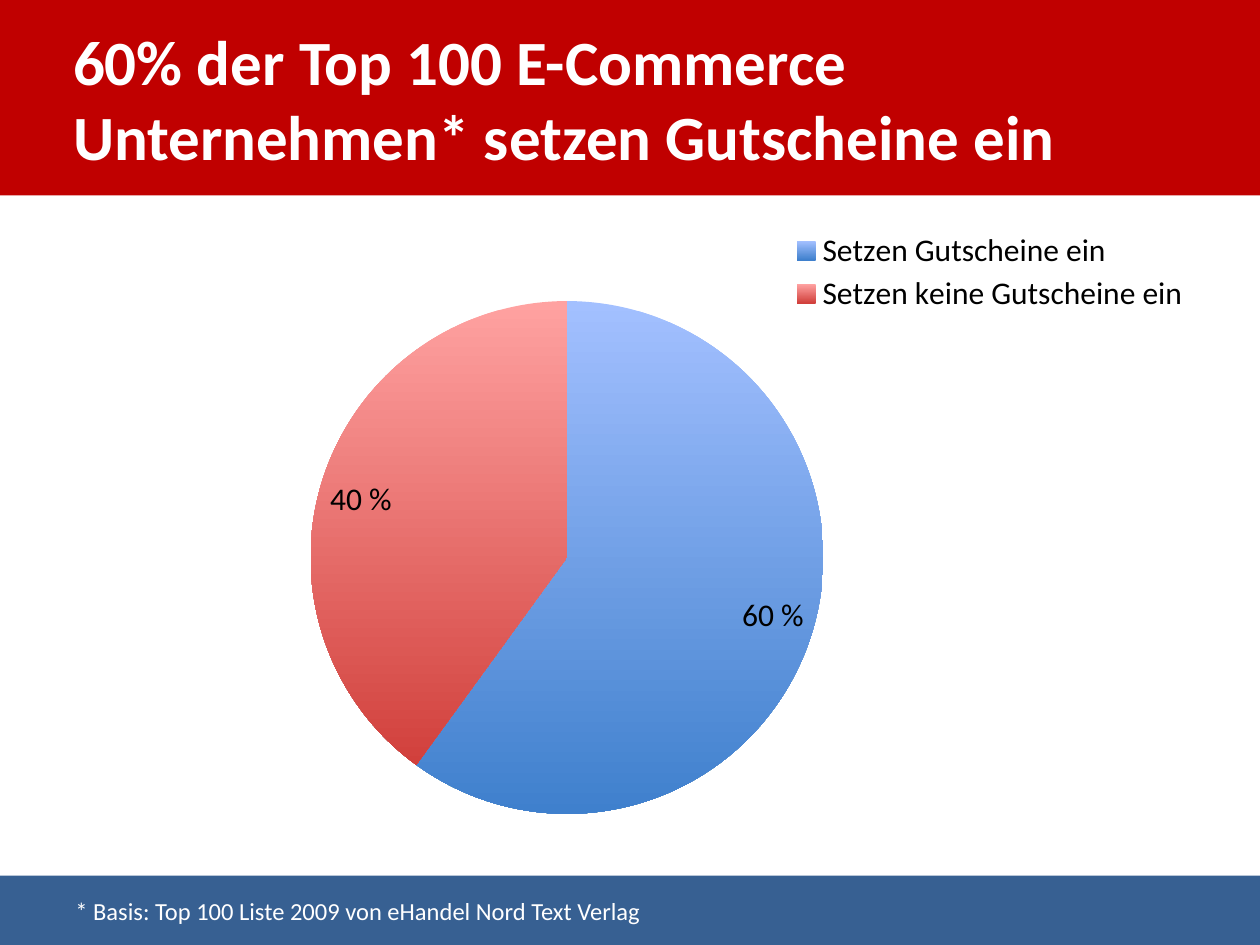
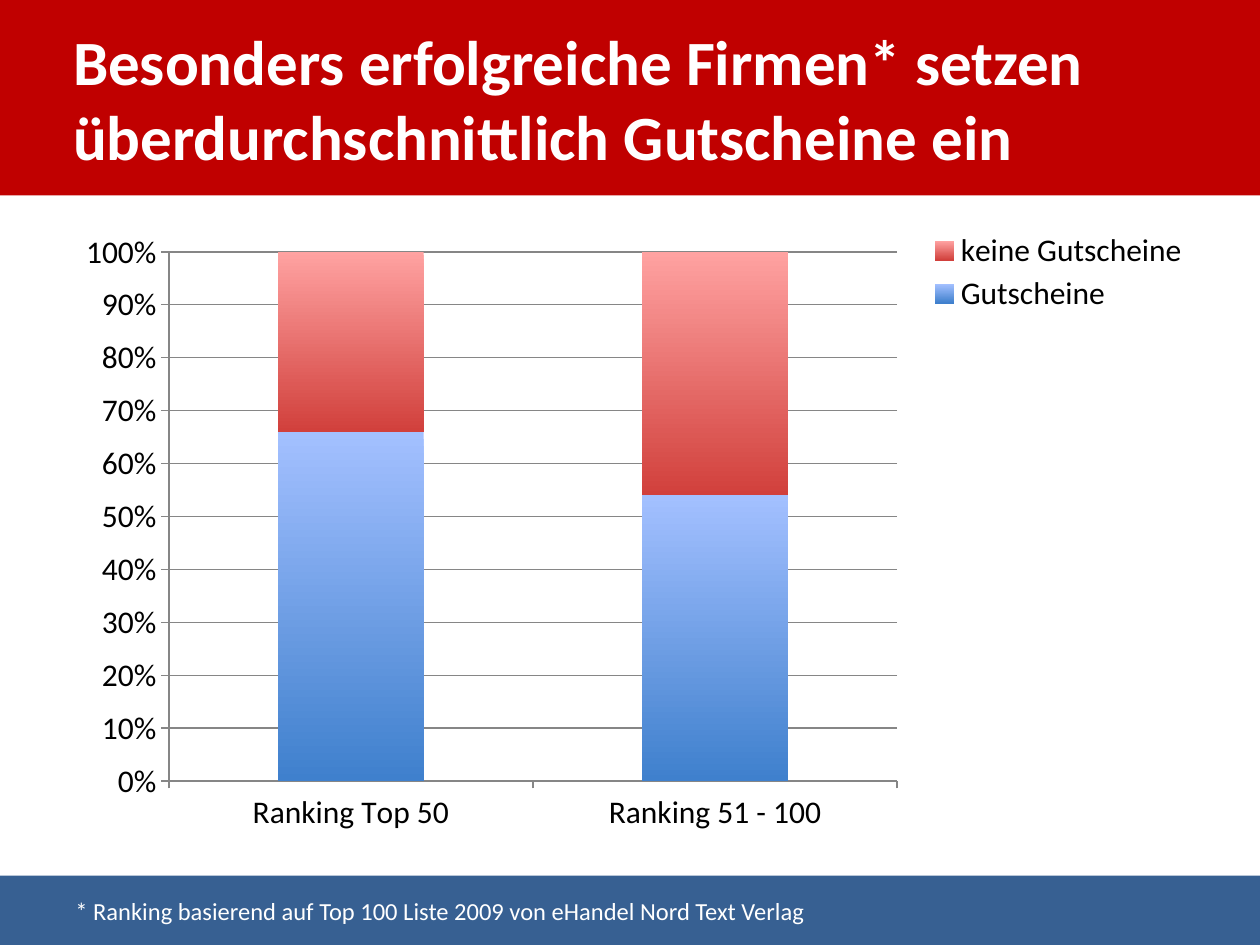
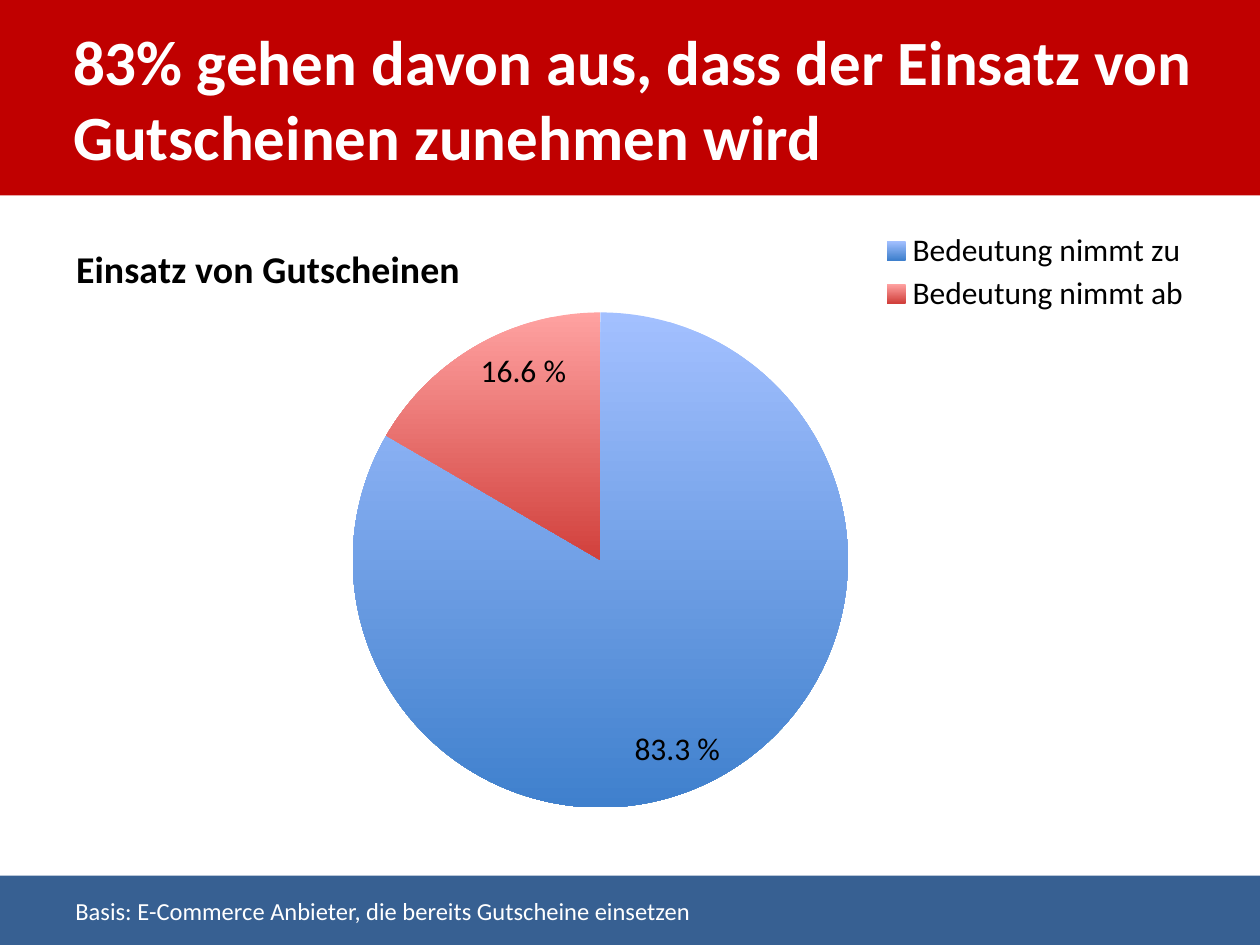
from dataclasses import dataclass
from lxml import etree
from pptx import Presentation
from pptx import util as u
from pptx.chart.data import CategoryChartData
from pptx.dml.color import RGBColor
from pptx.enum import chart as ch, shapes, text
from pptx.oxml import ns

WIDE, HIGH = 9, 4.95


@dataclass(frozen=True)
class Theme:
    font: str = "Calibri"
    red: str = "C00000"
    blue: str = "376092"
    white: str = "FFFFFF"
    black: str = "000000"
    grey: str = "868686"
    fades: tuple = (("A3C0FF", "3F80CD"), ("FFA2A1", "D1403C"))
    head: float = 36
    label: float = 18
    title: float = 21.6
    note: float = 14


def rgb(code):
    return RGBColor.from_string(code)


def place(node, index, box, inner=False):
    for old in node.findall(ns.qn("c:layout")):
        node.remove(old)
    layout = etree.Element(ns.qn("c:layout"))
    manual = etree.SubElement(layout, ns.qn("c:manualLayout"))
    items = [("layoutTarget", "inner")] if inner else []
    items += [("xMode", "edge"), ("yMode", "edge")]
    items += [(name, val / size) for name, val, size
              in zip("xywh", box, (WIDE, HIGH, WIDE, HIGH))]
    for name, val in items:
        etree.SubElement(manual, ns.qn("c:" + name)).set("val", str(val))
    node.insert(index, layout)


class Deck:
    def __init__(self, theme):
        self.theme = theme
        self.prs = Presentation()
        self.prs.slide_width = u.Inches(10)
        self.prs.slide_height = u.Inches(7.5)
        self.slide = None

    def style(self, font, size, color, bold=False):
        font.name = self.theme.font
        font.size = u.Pt(size)
        font.bold = bold
        font.color.rgb = rgb(color)

    def label(self, frame, words, size, bold=False):
        frame.word_wrap = True
        para = frame.paragraphs[0]
        para.alignment = text.PP_ALIGN.LEFT
        run = para.add_run()
        run.text = words
        self.style(run.font, size, self.theme.white, bold)

    def band(self, top, height, color):
        shape = self.slide.shapes.add_shape(
            shapes.MSO_SHAPE.RECTANGLE, 0, u.Inches(top),
            self.prs.slide_width, u.Inches(height))
        shape.shadow.inherit = False
        shape.fill.solid()
        shape.fill.fore_color.rgb = rgb(color)
        shape.line.fill.background()
        return shape

    def page(self, title, note):
        self.slide = self.prs.slides.add_slide(self.prs.slide_layouts[6])
        self.band(6.95, 0.55, self.theme.blue)
        frame = self.band(0, 1.55, self.theme.red).text_frame
        frame.margin_left = u.Inches(0.58)
        frame.margin_right = u.Inches(0.4)
        frame.vertical_anchor = text.MSO_ANCHOR.MIDDLE
        self.label(frame, title, self.theme.head, True)
        box = self.slide.shapes.add_textbox(
            u.Inches(0.5), u.Inches(7.06), u.Inches(7.84), u.Inches(0.34))
        self.label(box.text_frame, note, self.theme.note)

    def fade(self, fill, colors):
        fill.gradient()
        fill.gradient_angle = 270
        for stop, color in zip(fill.gradient_stops, colors):
            stop.color.rgb = rgb(color)

    def chart(self, kind, cats, series, plot, key):
        data = CategoryChartData()
        data.categories = cats
        for name, vals in series:
            data.add_series(name, vals)
        chart = self.slide.shapes.add_chart(
            kind, u.Inches(0.5), u.Inches(1.75), u.Inches(WIDE),
            u.Inches(HIGH), data).chart
        self.style(chart.font, self.theme.label, self.theme.black)
        chart.has_title = False
        chart.has_legend = True
        chart.legend.position = ch.XL_LEGEND_POSITION.RIGHT
        chart.legend.include_in_layout = False
        place(chart.legend._element, 1, (key, 0.05, 8.95 - key, 0.72))
        area = chart._chartSpace.find(".//" + ns.qn("c:plotArea"))
        place(area, 0, plot, True)
        return chart

    def pie(self, cats, name, vals, plot, key, title=None):
        chart = self.chart(ch.XL_CHART_TYPE.PIE, cats, [(name, vals)],
                           plot, key)
        pie = chart.plots[0]
        pie.vary_by_categories = True
        for index, colors in enumerate(self.theme.fades):
            self.fade(pie.series[0].points[index].format.fill, colors)
        pie.has_data_labels = True
        labels = pie.data_labels
        labels.show_value = True
        labels.show_percentage = False
        labels.number_format = r"General\ \%"
        labels.number_format_is_linked = False
        labels.position = ch.XL_LABEL_POSITION.INSIDE_END
        self.style(labels.font, self.theme.label, self.theme.black)
        if title:
            chart.has_title = True
            run = chart.chart_title.text_frame.paragraphs[0].add_run()
            run.text = title
            self.style(run.font, self.theme.title, self.theme.black, True)
            place(chart.chart_title._element, 1, (0.05, 0.12))

    def stack(self, cats, series, plot, key):
        chart = self.chart(ch.XL_CHART_TYPE.COLUMN_STACKED_100, cats,
                           series, plot, key)
        bars = chart.plots[0]
        bars.vary_by_categories = False
        bars.gap_width = 150
        bars.overlap = 100
        for item, colors in zip(bars.series, self.theme.fades):
            self.fade(item.format.fill, colors)
        value = chart.value_axis
        value.has_major_gridlines = True
        value.tick_labels.number_format = "0%"
        value.tick_labels.number_format_is_linked = False
        for axis in (value, chart.category_axis):
            axis.major_tick_mark = ch.XL_TICK_MARK.OUTSIDE
            axis.minor_tick_mark = ch.XL_TICK_MARK.NONE
        for part in (value, chart.category_axis, value.major_gridlines):
            part.format.line.color.rgb = rgb(self.theme.grey)
            part.format.line.width = u.Pt(0.75)


def main():
    deck = Deck(Theme())

    deck.page("60% der Top 100 E-Commerce Unternehmen* setzen Gutscheine ein",
              "* Basis: Top 100 Liste 2009 von eHandel Nord Text Verlag")
    deck.pie(["Setzen Gutscheine ein", "Setzen keine Gutscheine ein"],
             "Series 1", (60, 40), (1.96, 0.64, 4.08, 4.07), 5.76)

    deck.page("Besonders erfolgreiche Firmen* setzen "
              "überdurchschnittlich Gutscheine ein",
              "* Ranking basierend auf Top 100 Liste 2009 "
              "von eHandel Nord Text Verlag")
    deck.stack(["Ranking Top 50", "Ranking 51 - 100"],
               [("Gutscheine", (66, 54)), ("keine Gutscheine", (34, 46))],
               (0.84, 0.25, 5.78, 4.2), 6.88)

    deck.page("83% gehen davon aus, dass der Einsatz von "
              "Gutscheinen zunehmen wird",
              "Basis: E-Commerce Anbieter, die bereits Gutscheine einsetzen")
    topic = "Einsatz von Gutscheinen"
    deck.pie(["Bedeutung nimmt zu", "Bedeutung nimmt ab"], topic,
             (83.3, 16.6), (2.3, 0.73, 3.93, 3.93), 6.48, topic)

    deck.prs.save("out.pptx")


if __name__ == "__main__":
    main()
